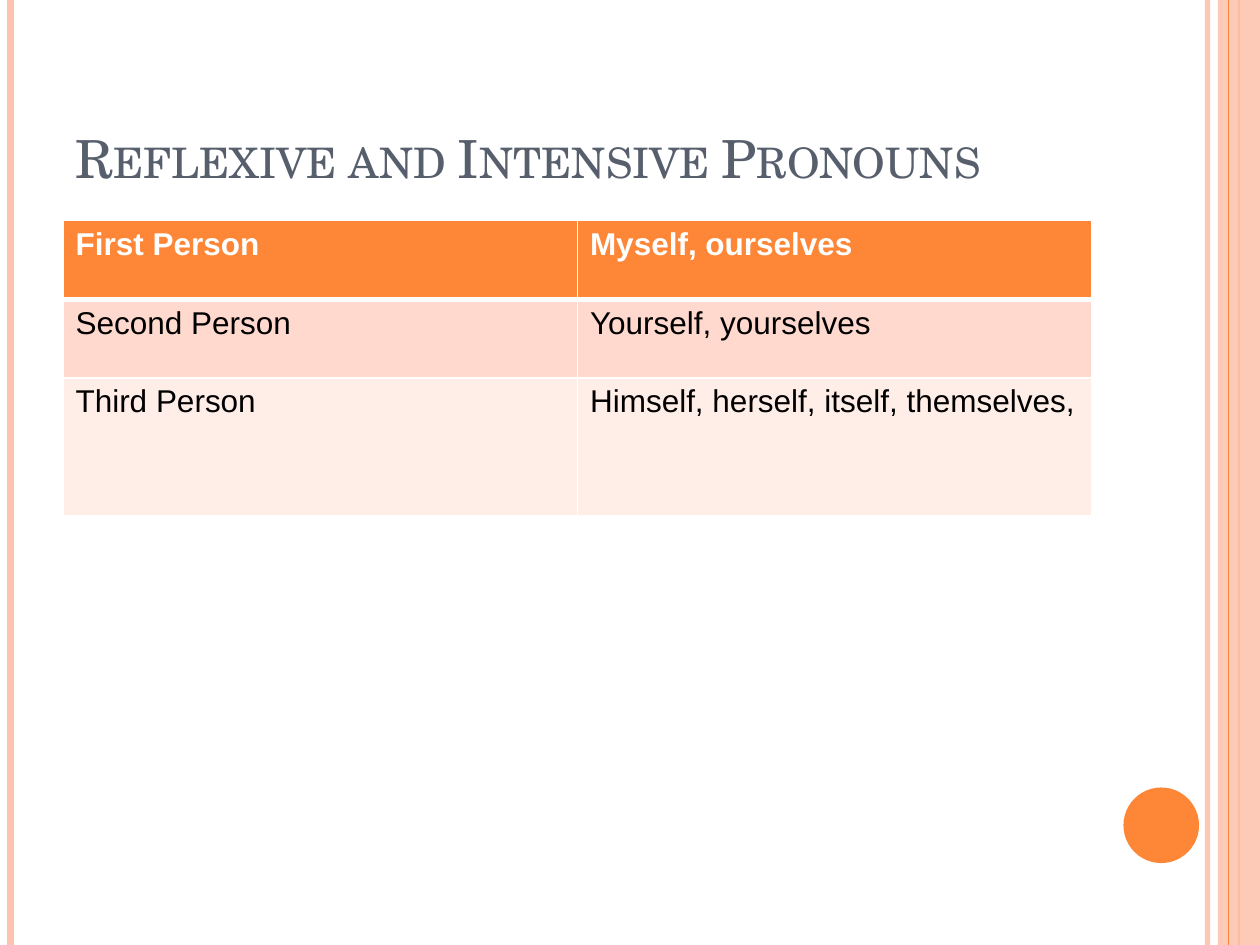
import pptx
import pptx.util
import pptx.dml.color
import pptx.enum.shapes
import pptx.enum.text
import pptx.oxml
import pptx.oxml.ns
import lxml.etree

Pt = pptx.util.Pt
qn = pptx.oxml.ns.qn
KIND = pptx.enum.shapes.MSO_SHAPE

# Content
TITLE = "Reflexive and Intensive Pronouns"
ROWS = [
    ("First Person", "Myself, ourselves"),
    ("Second Person", "Yourself, yourselves"),
    ("Third Person", "Himself, herself, itself, themselves,"),
]

THEME = {
    "orange": "FE8637", "peach": "FEC3AE", "slate": "575F6D",
    "white": "FFFFFF", "black": "000000",
    "bands": ["FE8637", "FFD9CE", "FFEDE8"],
    "serif": "TeX Gyre Schola", "sans": "Arial",
    "head": 30, "body": 18,
}

# Layout, in points
WIDE, HIGH = 720, 540
LEFT, SPAN = 36, 588
TOP, ROW_H = 126, [45, 45, 78.5]
# Each rule: x, weight, colour, opacity in percent
BACK = [(690, 3, "peach", 93), (6, 4.5, "peach", 100), (708, 1.5, "orange", 100)]
FRONT = [(702, 0.75, "orange", 100)]


def tint(name):
    return pptx.dml.color.RGBColor.from_string(THEME.get(name, name))


def fade(part, alpha):
    """Set opacity on the solid fill inside an XML element."""
    if alpha < 100:
        color = part.find(".//" + qn("a:srgbClr"))
        lxml.etree.SubElement(color, qn("a:alpha")).set("val", str(alpha * 1000))


def write(frame, text, font="sans", size="body", color="black", bold=False, small=False):
    run = frame.paragraphs[0].add_run()
    run.text = text
    run.font.name = THEME[font]
    run.font.size = Pt(THEME[size])
    run.font.bold = bold
    run.font.color.rgb = tint(color)
    if small:
        run.font._element.set("cap", "small")


def rule(slide, x, weight, color, alpha):
    line = slide.shapes.add_connector(
        pptx.enum.shapes.MSO_CONNECTOR.STRAIGHT, Pt(x), 0, Pt(x), Pt(HIGH))
    line.line.width = Pt(weight)
    line.line.color.rgb = tint(color)
    props = line._element.spPr
    fade(props, alpha)
    lxml.etree.SubElement(props, qn("a:effectLst"))


def block(slide, kind, box, color, alpha=100):
    shape = slide.shapes.add_shape(kind, *map(Pt, box))
    shape.shadow.inherit = False
    shape.fill.solid()
    shape.fill.fore_color.rgb = tint(color)
    shape.line.fill.background()
    fade(shape._element.spPr, alpha)


def edge(cell, side, weight):
    props = cell._tc.get_or_add_tcPr()
    line = lxml.etree.SubElement(props, qn("a:" + side), w=str(Pt(weight)))
    fill = lxml.etree.SubElement(line, qn("a:solidFill"))
    lxml.etree.SubElement(fill, qn("a:srgbClr"), val=THEME["white"])


def grid(slide):
    table = slide.shapes.add_table(
        len(ROWS), 2, Pt(LEFT), Pt(TOP), Pt(SPAN), Pt(sum(ROW_H))).table
    for col in table.columns:
        col.width = Pt(SPAN / 2)
    for r, row in enumerate(ROWS):
        table.rows[r].height = Pt(ROW_H[r])
        for c, text in enumerate(row):
            cell = table.cell(r, c)
            # Borders come before the fill in the cell properties
            for side in ("lnL", "lnR", "lnT", "lnB"):
                thick = (r, side) in ((0, "lnB"), (1, "lnT"))
                edge(cell, side, 3 if thick else 1)
            cell.fill.solid()
            cell.fill.fore_color.rgb = tint(THEME["bands"][r])
            write(cell.text_frame, text, bold=r == 0,
                  color="black" if r else "white")


def main():
    deck = pptx.Presentation()
    deck.slide_width, deck.slide_height = Pt(WIDE), Pt(HIGH)
    slide = deck.slides.add_slide(deck.slide_layouts[6])

    # Side stripes and disc
    for item in BACK:
        rule(slide, *item)
    block(slide, KIND.RECTANGLE, (696, 0, 24, HIGH), "peach", 87)
    for item in FRONT:
        rule(slide, *item)
    block(slide, KIND.OVAL, (642, 450, 43.2, 43.2), "orange")

    # Title
    frame = slide.shapes.add_textbox(Pt(LEFT), Pt(21.6), Pt(SPAN), Pt(90)).text_frame
    frame.word_wrap = True
    frame.vertical_anchor = pptx.enum.text.MSO_ANCHOR.BOTTOM
    write(frame, TITLE, font="serif", size="head", color="slate", small=True)

    # Pronoun table
    grid(slide)
    deck.save("out.pptx")


if __name__ == "__main__":
    main()
